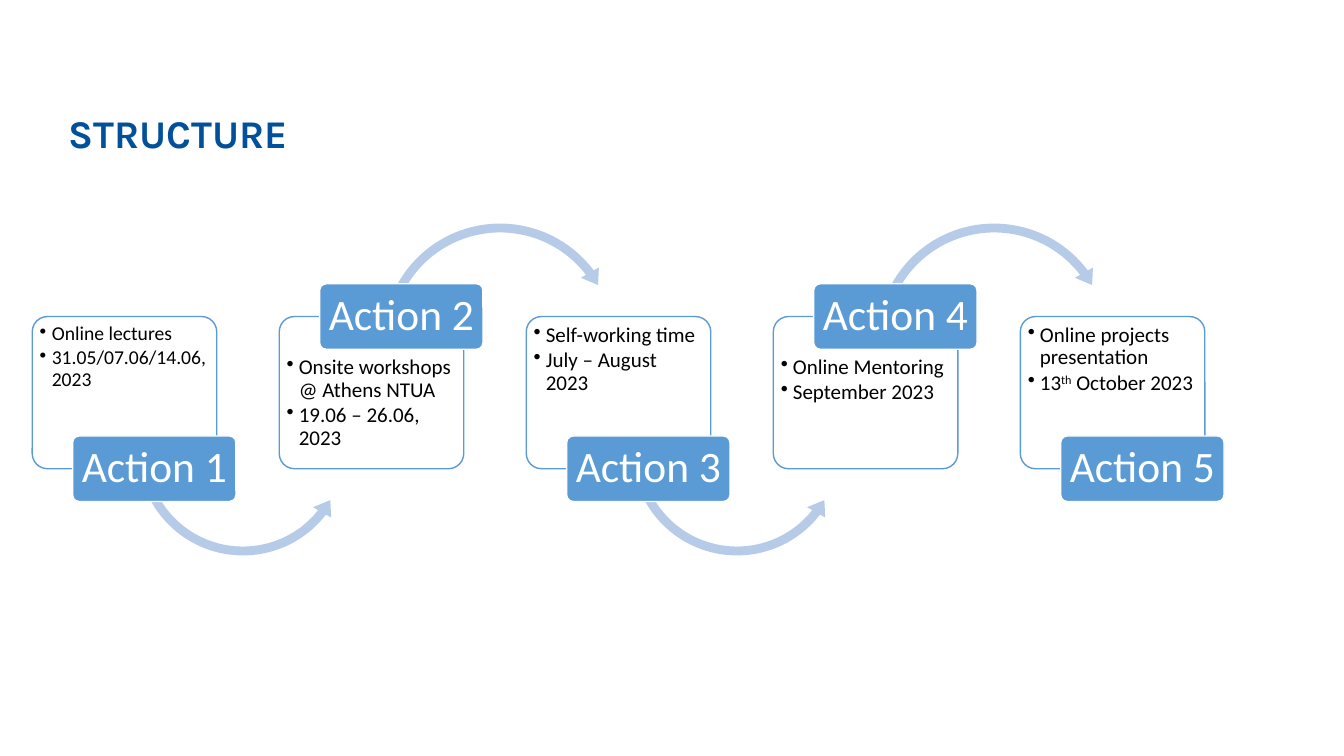
"""Build the programme structure slide: five linked action cards."""
import pptx
import pptx.util
import pptx.dml.color
import pptx.enum.shapes
import pptx.enum.text
import pptx.oxml.ns
import lxml.etree

Inches, Pt = pptx.util.Inches, pptx.util.Pt
RGBColor = pptx.dml.color.RGBColor
SHAPE = pptx.enum.shapes.MSO_SHAPE
ALIGN, ANCHOR = pptx.enum.text.PP_ALIGN, pptx.enum.text.MSO_ANCHOR
qn = pptx.oxml.ns.qn

TITLE = "STRUCTURE"
ACTIONS = [
    ("Action 1", 14, [["Online lectures"], ["31.05/07.06/14.06, 2023"]]),
    ("Action 2", 15, [["Onsite workshops @ Athens NTUA"], ["19.06 – 26.06, 2023"]]),
    ("Action 3", 15, [["Self-working time"], ["July – August 2023"]]),
    ("Action 4", 15, [["Online Mentoring"], ["September 2023"]]),
    ("Action 5", 15, [["Online projects presentation"], ["13", "th", " October 2023"]]),
]

NAVY = RGBColor(0x00, 0x50, 0x9B)
BLUE = RGBColor(0x5B, 0x9B, 0xD5)
PALE = RGBColor(0xB5, 0xCB, 0xE7)
WHITE = RGBColor(0xFF, 0xFF, 0xFF)
BLACK = RGBColor(0x00, 0x00, 0x00)

LEFT, PITCH = 0.32, 2.45
CARD_TOP, CARD_W, CARD_H = 3.14, 1.83, 1.51
LABEL_DX, LABEL_W, LABEL_H = 0.4, 1.62, 0.65
LOW_ARROW = (SHAPE.LEFT_CIRCULAR_ARROW, 0.99, 3.37, 2.2,
             (0.04, 5.044, 22.799, 90.245, 0.047))
HIGH_ARROW = (SHAPE.CIRCULAR_ARROW, 0.97, 2.16, 2.44,
              (0.036, 4.52, 193.725, 125.755, 0.042))


def style(font, name, size, color, bold=False):
    font.name, font.size, font.bold = name, Pt(size), bold
    font.color.rgb = color


def add_shape(slide, kind, box, adjustments, fill, line=None):
    sp = slide.shapes.add_shape(kind, *(Inches(v) for v in box))
    sp.shadow.inherit = False
    for i, value in enumerate(adjustments):
        sp.adjustments[i] = value
    sp.fill.solid()
    sp.fill.fore_color.rgb = fill
    if line is None:
        sp.line.fill.background()
    else:
        sp.line.color.rgb = line
        sp.line.width = Pt(1)
    return sp


def set_frame(sp, anchor, left, top, right, bottom):
    tf = sp.text_frame
    tf.word_wrap = True
    tf.vertical_anchor = anchor
    tf.margin_left, tf.margin_top = Inches(left), Inches(top)
    tf.margin_right, tf.margin_bottom = Inches(right), Inches(bottom)
    return tf


def add_card(slide, x, label_above, size, bullets):
    sp = add_shape(slide, SHAPE.ROUNDED_RECTANGLE, (x, CARD_TOP, CARD_W, CARD_H),
                   [0.1], WHITE, BLUE)
    color = sp.fill._xPr.find(qn("a:solidFill"))[0]
    lxml.etree.SubElement(color, qn("a:alpha")).set("val", "90000")
    top = 0.35 if label_above else 0.03
    tf = set_frame(sp, ANCHOR.TOP, 0.03, top, 0.03, 0.03)
    for i, parts in enumerate(bullets):
        p = tf.paragraphs[0] if i == 0 else tf.add_paragraph()
        pPr = p._p.get_or_add_pPr()
        pPr.set("marL", str(Inches(0.12)))
        pPr.set("indent", str(-Inches(0.12)))
        lxml.etree.SubElement(pPr, qn("a:buChar")).set("char", "•")
        p.alignment = ALIGN.LEFT
        p.level = 1
        p.line_spacing = 0.9
        p.space_after = Pt(2)
        for part in parts:
            r = p.add_run()
            r.text = part
            style(r.font, "Calibri", size, BLACK)
            if part == "th":
                r._r.get_or_add_rPr().set("baseline", "30000")


def add_label(slide, x, label_above, text):
    edge = CARD_TOP if label_above else CARD_TOP + CARD_H
    box = (x + LABEL_DX, edge - LABEL_H / 2, LABEL_W, LABEL_H)
    sp = add_shape(slide, SHAPE.ROUNDED_RECTANGLE, box, [0.1], BLUE, WHITE)
    tf = set_frame(sp, ANCHOR.MIDDLE, 0.06, 0.04, 0.06, 0.04)
    tf.text = text
    p = tf.paragraphs[0]
    p.alignment = ALIGN.CENTER
    p.line_spacing = 0.9
    style(p.runs[0].font, "Calibri", 31, WHITE)


def main():
    prs = pptx.Presentation()
    prs.slide_width, prs.slide_height = Inches(13.33), Inches(7.5)
    slide = prs.slides.add_slide(prs.slide_layouts[5])

    title = slide.shapes.title
    title.left, title.top = Inches(0.58), Inches(0.85)
    title.width, title.height = Inches(11.84), Inches(1)
    tf = set_frame(title, ANCHOR.MIDDLE, 0.1, 0.05, 0.1, 0.05)
    tf.text = TITLE
    p = tf.paragraphs[0]
    p.alignment = ALIGN.LEFT
    p.line_spacing = 0.9
    style(p.runs[0].font, "Karla", 28, NAVY, True)

    for i, (label, size, bullets) in enumerate(ACTIONS):
        x = LEFT + i * PITCH
        label_above = i % 2 == 1
        add_card(slide, x, label_above, size, bullets)
        if i < len(ACTIONS) - 1:
            kind, dx, top, side, adjustments = HIGH_ARROW if label_above else LOW_ARROW
            add_shape(slide, kind, (x + dx, top, side, side), adjustments, PALE)
        add_label(slide, x, label_above, label)

    prs.save("out.pptx")


if __name__ == "__main__":
    main()
